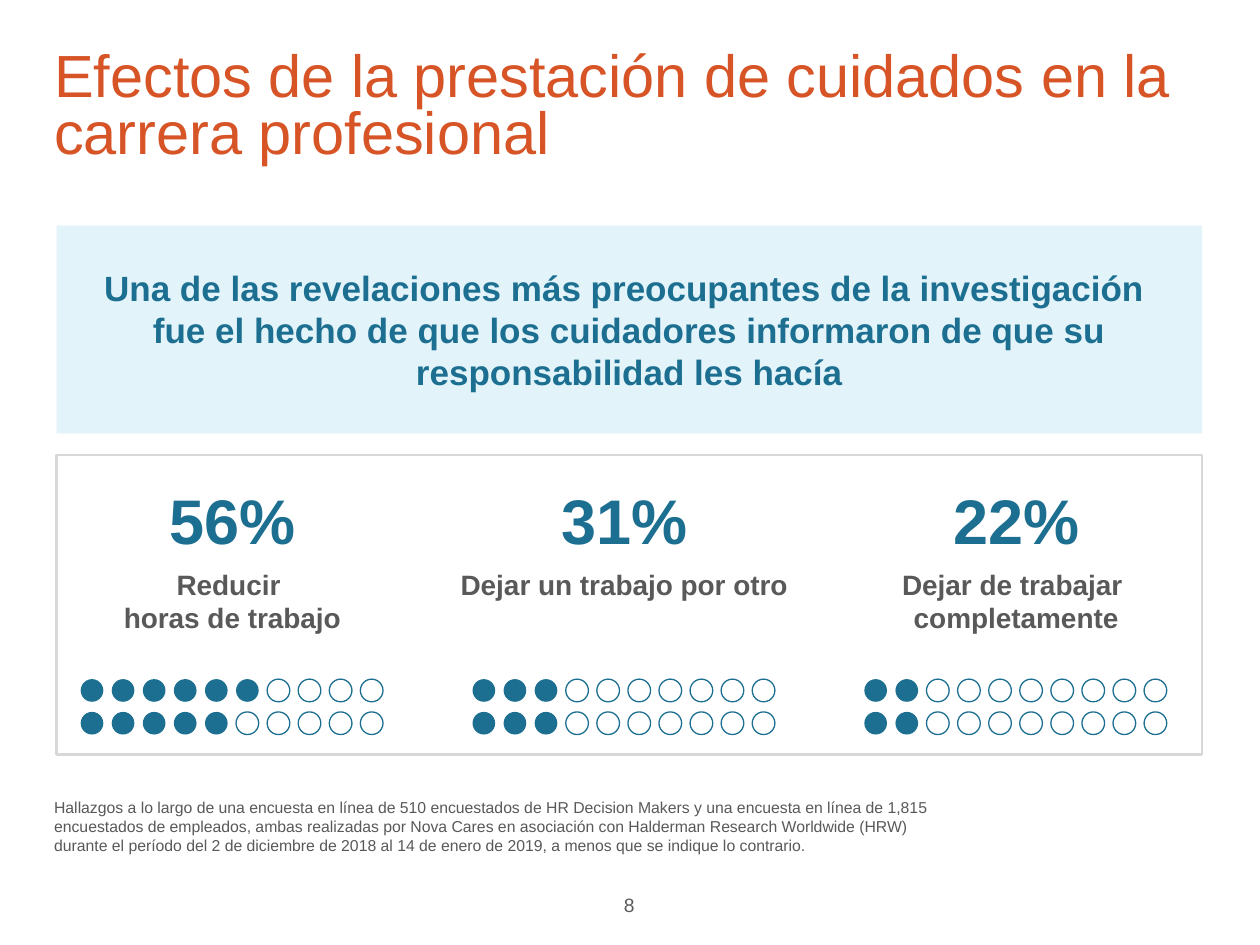
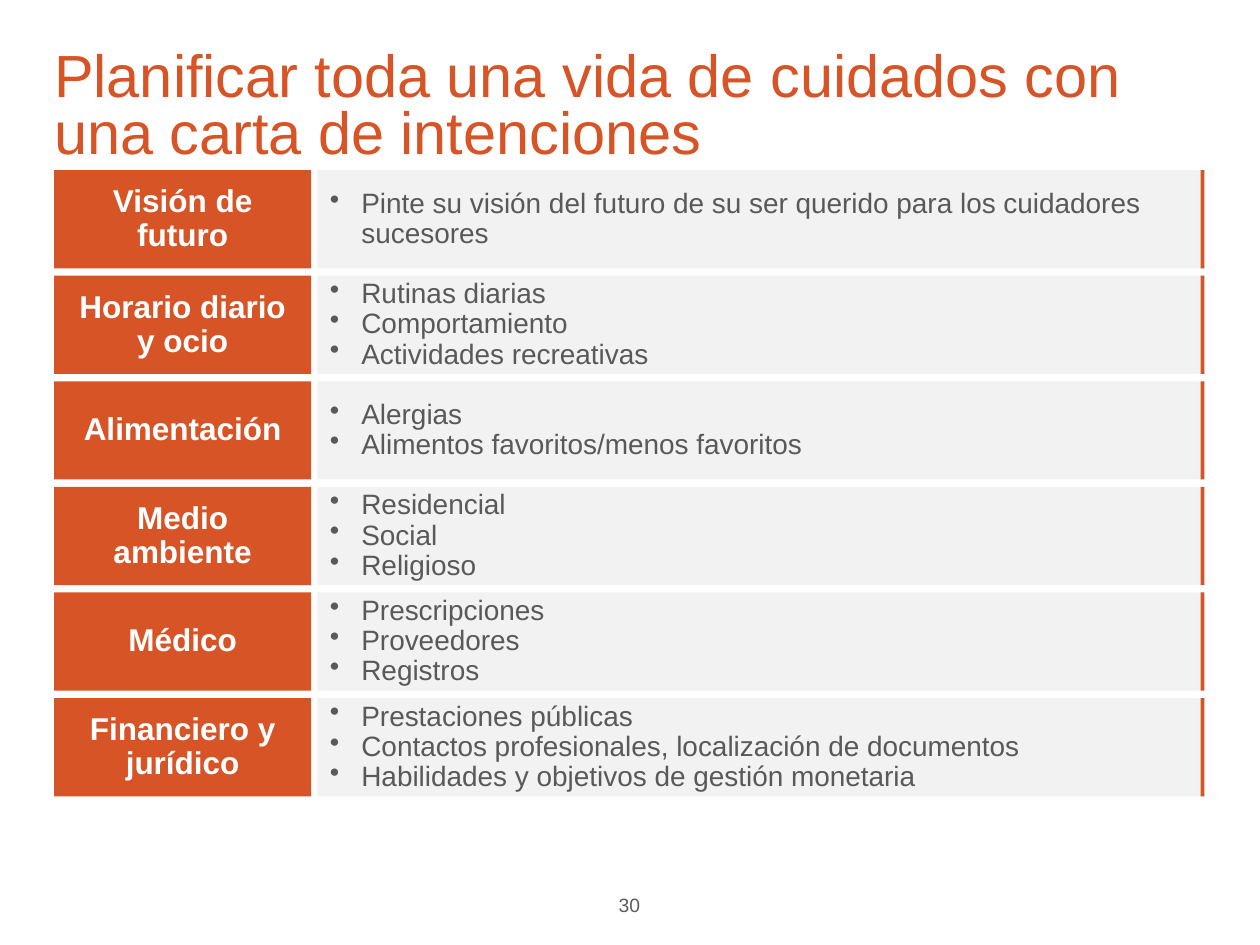
"""Build two slides on caregiving: its effect on careers and the letter of intent."""
from copy import deepcopy
from dataclasses import dataclass

from lxml.etree import SubElement
from pptx import Presentation
from pptx.dml.color import RGBColor
from pptx.enum.shapes import MSO_SHAPE as Preset
from pptx.enum.text import MSO_ANCHOR as Anchor, PP_ALIGN as Align
from pptx.oxml.ns import qn
from pptx.util import Inches, Pt


@dataclass(frozen=True)
class Theme:
    font: str = "Arial"
    orange: str = "D75426"
    teal: str = "1C6F90"
    pale_blue: str = "E2F3F9"
    pale_gray: str = "F2F2F2"
    frame_gray: str = "D8D8D8"
    body: str = "595959"
    page: str = "5B5B5B"
    white: str = "FFFFFF"
    title_size: int = 34
    percent_size: int = 36
    banner_size: int = 20
    label_size: int = 18
    body_size: int = 16
    page_size: int = 11
    note_size: int = 9


THEME = Theme()
BOX_INSETS = (0.1, 0.05, 0.1, 0.05)
ROW_INSETS = (0.1, 0.07, 0.1, 0.07)


class Deck:
    def __init__(self, theme):
        self.theme = theme
        self.show = Presentation()
        self.show.slide_width, self.show.slide_height = Inches(10), Inches(7.5)
        self.slide = None

    def new_slide(self, title, page):
        theme = self.theme
        self.slide = self.show.slides.add_slide(self.show.slide_layouts[6])
        heading = self.text_box((0.43, 0.41, 9.12, 0.78), (0, 0, 0.1, 0.05))
        self.add_text(heading, title, theme.title_size, theme.orange, line_spacing=0.8)
        footer = self.text_box((4.68, 7.04, 0.63, 0.46))
        self.add_text(footer, page, theme.page_size, theme.page, alignment=Align.CENTER)

    def text_box(self, place, insets=BOX_INSETS):
        box = self.slide.shapes.add_textbox(*map(Inches, place))
        return self.set_frame(box, insets)

    def set_frame(self, shape, insets, anchor=Anchor.TOP):
        left, top, right, bottom = map(Inches, insets)
        formats = {
            "margin_left": left, "margin_top": top,
            "margin_right": right, "margin_bottom": bottom,
            "word_wrap": True, "vertical_anchor": anchor,
        }
        for name, value in formats.items():
            setattr(shape.text_frame, name, value)
        return shape

    def panel(self, place, fill=None, line=None, width=0.75, preset=Preset.RECTANGLE):
        shape = self.slide.shapes.add_shape(preset, *map(Inches, place))
        shape.shadow.inherit = False
        if fill:
            shape.fill.solid()
            shape.fill.fore_color.rgb = RGBColor.from_string(fill)
        else:
            shape.fill.background()
        if line:
            shape.line.color.rgb = RGBColor.from_string(line)
            shape.line.width = Pt(width)
        else:
            shape.line.fill.background()
        return shape

    def add_text(self, shape, text, size, color, bold=False, bullet=False, **layout):
        frame = shape.text_frame
        paragraph = frame.add_paragraph() if frame.text else frame.paragraphs[0]
        paragraph.text = text
        for name, value in ({"alignment": Align.LEFT} | layout).items():
            setattr(paragraph, name, value)
        if bullet:
            self.add_bullet(paragraph, color)
        formats = {"name": self.theme.font, "size": Pt(size), "bold": bold}
        for run in paragraph.runs:
            for name, value in formats.items():
                setattr(run.font, name, value)
            run.font.color.rgb = RGBColor.from_string(color)
        for line_break in paragraph._p.findall(qn("a:br")):
            line_break.append(deepcopy(paragraph.runs[0]._r.rPr))

    def add_bullet(self, paragraph, color):
        properties = paragraph._p.get_or_add_pPr()
        properties.set("marL", str(Inches(0.25)))
        properties.set("indent", str(Inches(-0.25)))
        bullet_color = SubElement(properties, qn("a:buClr"))
        SubElement(bullet_color, qn("a:srgbClr"), val=color)
        SubElement(properties, qn("a:buChar"), char="•")

    def dots(self, left, percent):
        teal = self.theme.teal
        filled = round(percent / 5)
        row_counts = (filled - filled // 2, filled // 2)
        for row, count in enumerate(row_counts):
            for column in range(10):
                place = (left + column * 2.22 / 9, 5.39 + row * 0.26, 0.18, 0.18)
                paint = {"fill": teal} if column < count else {"line": teal}
                self.panel(place, preset=Preset.OVAL, **paint)

    def effect(self, left, percent, label):
        theme = self.theme
        box = self.text_box((left, 3.77, 2.83, 1.33))
        self.add_text(box, f"{percent}%", theme.percent_size, theme.teal,
                      bold=True, alignment=Align.CENTER)
        self.add_text(box, label, theme.body_size, theme.body,
                      bold=True, alignment=Align.CENTER, space_before=Pt(6))
        self.dots(left + 0.21, percent)

    def topic_row(self, top, topic, details):
        theme = self.theme
        label = self.panel((0.43, top, 2.04, 0.78), theme.orange)
        self.set_frame(label, ROW_INSETS, Anchor.MIDDLE)
        self.add_text(label, topic, theme.label_size, theme.white, bold=True,
                      alignment=Align.CENTER, line_spacing=0.9)
        content = self.panel((2.52, top, 7.04, 0.78), theme.pale_gray)
        self.set_frame(content, ROW_INSETS, Anchor.MIDDLE)
        for detail in details:
            self.add_text(content, detail, theme.body_size, theme.body,
                          bullet=True, line_spacing=0.9)
        self.panel((9.53, top, 0.03, 0.78), theme.orange)


EFFECTS = [
    (56, "Reducir \vhoras de trabajo"),
    (31, "Dejar un trabajo por otro"),
    (22, "Dejar de trabajar \vcompletamente"),
]
FINDING = (
    "Una de las revelaciones más preocupantes de la investigación \v"
    "fue el hecho de que los cuidadores informaron de que su responsabilidad les hacía"
)
SURVEY_NOTE = (
    "Hallazgos a lo largo de una encuesta en línea de 510 encuestados de HR Decision "
    "Makers y una encuesta en línea de 1,815 encuestados de empleados, ambas realizadas "
    "por Nova Cares en asociación con Halderman Research Worldwide (HRW) durante el "
    "período del 2 de diciembre de 2018 al 14 de enero de 2019, a menos que se indique "
    "lo contrario."
)
TOPICS = {
    "Visión de futuro": [
        "Pinte su visión del futuro de su ser querido para los cuidadores sucesores",
    ],
    "Horario diario y ocio": [
        "Rutinas diarias", "Comportamiento", "Actividades recreativas",
    ],
    "Alimentación": ["Alergias", "Alimentos favoritos/menos favoritos"],
    "Medio ambiente": ["Residencial", "Social", "Religioso"],
    "Médico": ["Prescripciones", "Proveedores", "Registros"],
    "Financiero y jurídico": [
        "Prestaciones públicas",
        "Contactos profesionales, localización de documentos",
        "Habilidades y objetivos de gestión monetaria",
    ],
}


def career_effects(deck):
    theme = deck.theme
    deck.new_slide("Efectos de la prestación de cuidados en la carrera profesional", "8")
    finding = deck.panel((0.45, 1.79, 9.09, 1.65), theme.pale_blue)
    deck.set_frame(finding, BOX_INSETS, Anchor.MIDDLE)
    deck.add_text(finding, FINDING, theme.banner_size, theme.teal,
                  bold=True, alignment=Align.CENTER)
    note = deck.text_box((0.43, 6.33, 7.04, 0.45), (0, 0, 0, 0))
    deck.add_text(note, SURVEY_NOTE, theme.note_size, theme.body)
    for column, (percent, label) in enumerate(EFFECTS):
        deck.effect(0.43 + column * 3.11, percent, label)
    deck.panel((0.45, 3.61, 9.09, 2.38), line=theme.frame_gray, width=1.5)


def letter_of_intent(deck):
    deck.new_slide("Planificar toda una vida de cuidados con una carta de intenciones", "30")
    for row, (topic, details) in enumerate(TOPICS.items()):
        deck.topic_row(1.35 + row * 4.19 / 5, topic, details)


def main():
    deck = Deck(THEME)
    career_effects(deck)
    letter_of_intent(deck)
    deck.show.save("out.pptx")


if __name__ == "__main__":
    main()
